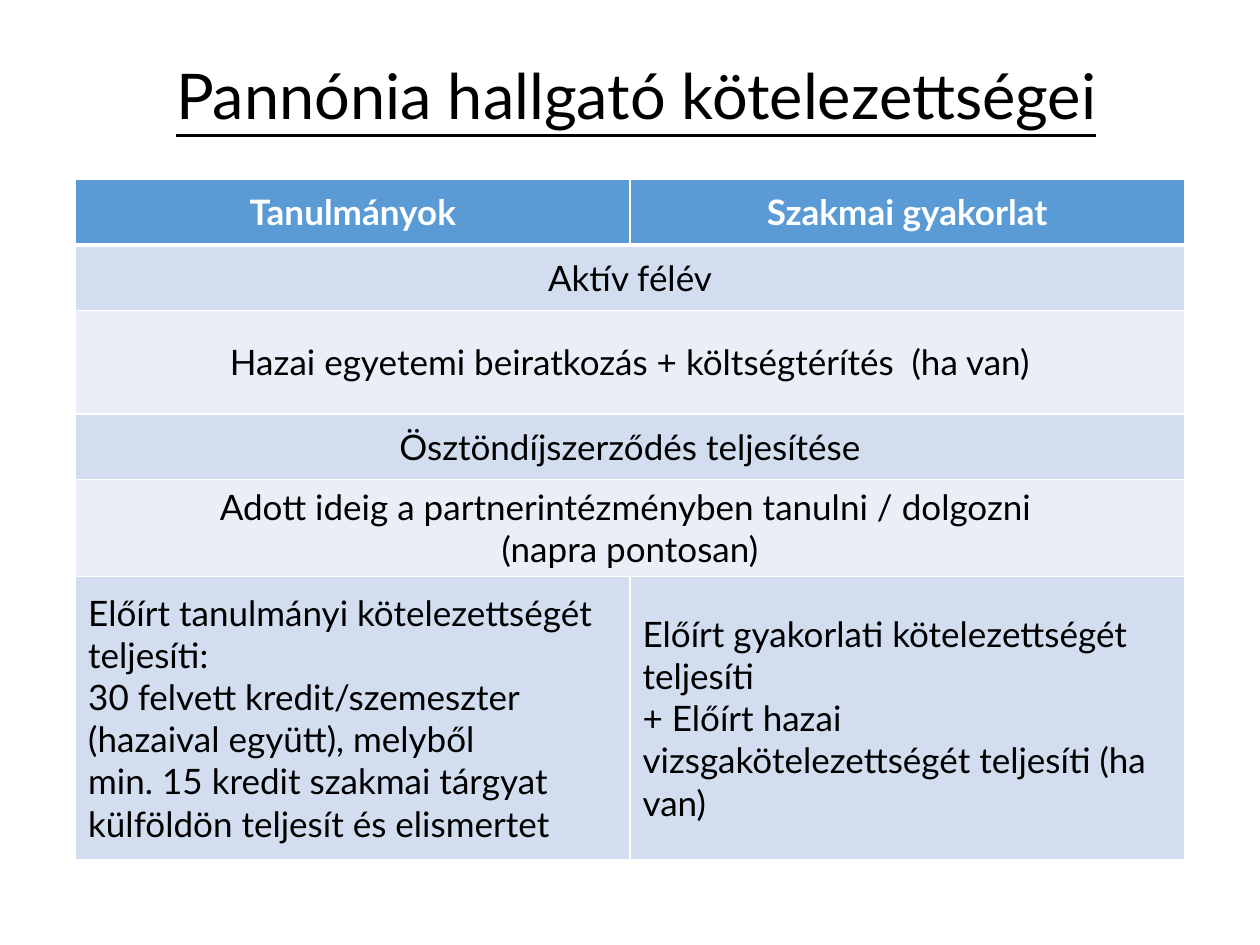
from lxml import etree
from pptx import Presentation
from pptx.dml.color import RGBColor
from pptx.enum import text
from pptx.oxml import ns
from pptx import util as u

BLACK = RGBColor(0x00, 0x00, 0x00)
WHITE = RGBColor(0xFF, 0xFF, 0xFF)
HEADER_BLUE = RGBColor(0x5B, 0x9B, 0xD5)
BANDS = (RGBColor(0xD2, 0xDE, 0xEF), RGBColor(0xEA, 0xEF, 0xF7))
CENTER, LEFT = text.PP_ALIGN.CENTER, text.PP_ALIGN.LEFT

HEADINGS = ("Tanulmányok", "Szakmai gyakorlat")
SHARED_DUTIES = (
    "Aktív félév",
    "Hazai egyetemi beiratkozás + költségtérítés  (ha van)",
    "Ösztöndíjszerződés teljesítése",
    "Adott ideig a partnerintézményben tanulni / dolgozni \n(napra pontosan)",
)
STUDY_DUTIES = (
    "Előírt tanulmányi kötelezettségét teljesíti:",
    "30 felvett kredit/szemeszter (hazaival együtt), melyből",
    "min. 15 kredit szakmai tárgyat külföldön teljesít és elismertet",
)
PRACTICE_DUTIES = (
    "Előírt gyakorlati kötelezettségét teljesíti",
    "+ Előírt hazai vizsgakötelezettségét teljesíti (ha van)",
)
ROW_HEIGHTS = (0.52, 0.52, 0.82, 0.52, 0.77, 2.25)


class DutySlide:
    """Holds the style and the current slide, and draws its elements."""

    font = "Lato"
    title_size = 36
    cell_size = 20

    def __init__(self, deck):
        self.width, self.height = deck.slide_width, deck.slide_height
        self.slide = deck.slides.add_slide(deck.slide_layouts[6])

    def box(self, left, top, width, height):
        return (int(self.width * left), int(self.height * top),
                int(self.width * width), int(self.height * height))

    def add_text(self, frame, paragraphs, size, color, align, bold=False, underline=False):
        for index, wording in enumerate(paragraphs):
            paragraph = frame.paragraphs[0] if index == 0 else frame.add_paragraph()
            paragraph.alignment = align
            for number, line in enumerate(wording.split("\n")):
                if number:
                    paragraph.add_line_break()
                run = paragraph.add_run()
                run.text = line
                run.font.name = self.font
                run.font.size = u.Pt(size)
                run.font.bold = bold
                run.font.underline = underline
                run.font.color.rgb = color

    def title(self, wording, left, top, width, height):
        heading = self.slide.shapes.add_textbox(*self.box(left, top, width, height))
        frame = heading.text_frame
        frame.word_wrap = True
        frame.vertical_anchor = text.MSO_ANCHOR.MIDDLE
        self.add_text(frame, [wording], self.title_size, BLACK, CENTER, underline=True)
        frame.paragraphs[0].line_spacing = 0.9

    def table(self, columns, row_heights, left, top, width):
        share = sum(row_heights) * u.Inches(1) / self.height
        frame = self.slide.shapes.add_table(
            len(row_heights), columns, *self.box(left, top, width, share))
        for row, height in zip(frame.table.rows, row_heights):
            row.height = u.Inches(height)
        return frame.table

    def borders(self, cell, bottom):
        properties = cell._tc.get_or_add_tcPr()
        for side, points in (("L", 1), ("R", 1), ("T", 1), ("B", bottom)):
            line = etree.SubElement(properties, ns.qn(f"a:ln{side}"), w=str(u.Pt(points)))
            fill = etree.SubElement(line, ns.qn("a:solidFill"))
            etree.SubElement(fill, ns.qn("a:srgbClr"), val=str(WHITE))

    def row(self, table, index, contents, fill, color=BLACK, align=CENTER,
            bold=False, bottom=1):
        cells = [table.cell(index, column) for column in range(len(table.columns))]
        for cell in cells:
            self.borders(cell, bottom)
            cell.fill.solid()
            cell.fill.fore_color.rgb = fill
            cell.vertical_anchor = text.MSO_ANCHOR.MIDDLE
        if len(contents) == 1:
            cells[0].merge(cells[-1])
        for cell, paragraphs in zip(cells, contents):
            self.add_text(cell.text_frame, paragraphs, self.cell_size, color, align, bold)


def main():
    deck = Presentation()
    deck.slide_width, deck.slide_height = u.Inches(10), u.Inches(7.5)
    page = DutySlide(deck)
    page.title("Pannónia hallgató kötelezettségei", 0.02, 0.02, 0.97, 0.17)
    duties = page.table(len(HEADINGS), ROW_HEIGHTS, 0.06, 0.19, 0.88)
    page.row(duties, 0, [[heading] for heading in HEADINGS], HEADER_BLUE,
             color=WHITE, bold=True, bottom=3)
    for index, duty in enumerate(SHARED_DUTIES):
        page.row(duties, index + 1, [[duty]], BANDS[index % 2])
    page.row(duties, len(ROW_HEIGHTS) - 1, [STUDY_DUTIES, PRACTICE_DUTIES],
             BANDS[0], align=LEFT)
    deck.save("out.pptx")


if __name__ == "__main__":
    main()
